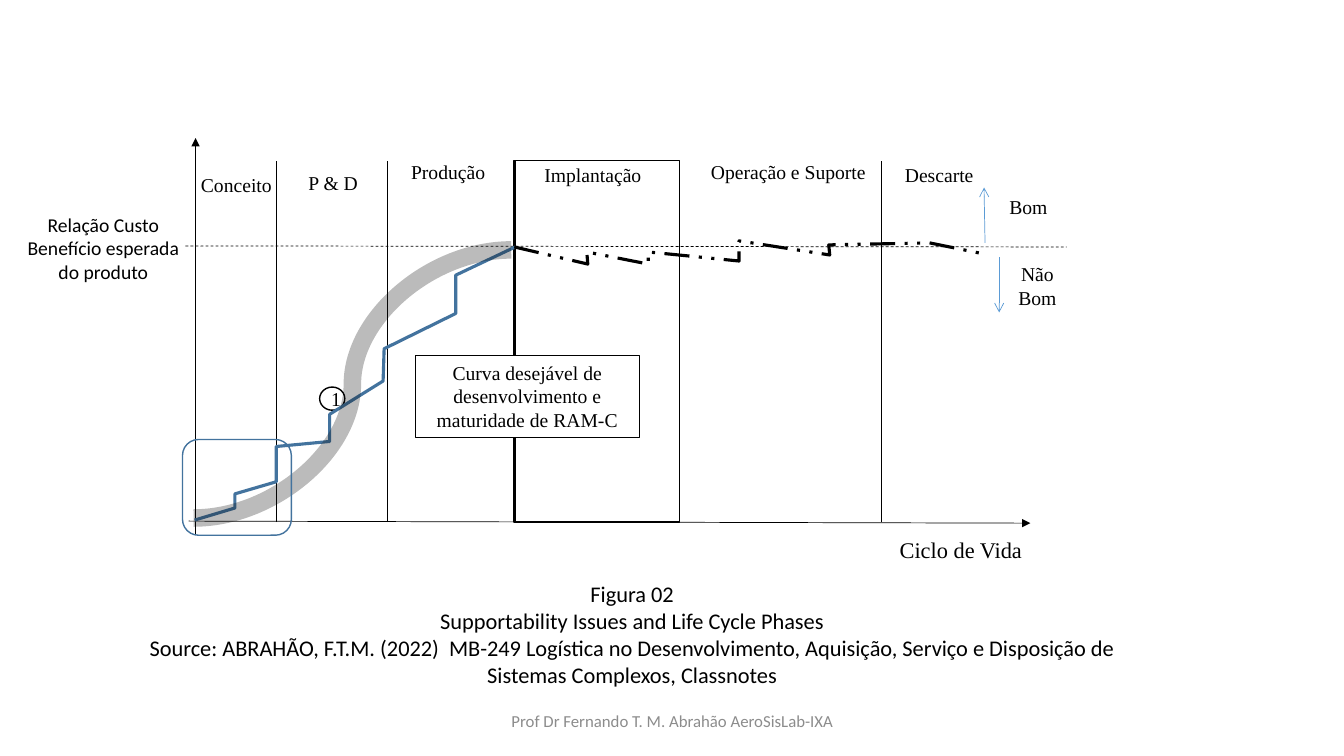
from lxml import etree
from pptx import Presentation
from pptx.dml.color import RGBColor
from pptx.enum.dml import MSO_LINE
from pptx.enum.shapes import MSO_CONNECTOR, MSO_SHAPE
from pptx.enum.text import MSO_ANCHOR, PP_ALIGN
from pptx.oxml.ns import qn
from pptx.util import Inches, Pt

BLACK, WHITE, BLUE, LIGHT_BLUE = "000000", "FFFFFF", "43739E", "5B9BD5"
SERIF, SANS = "Times New Roman", "Calibri"

presentation = Presentation()
presentation.slide_width = Inches(13.33)
presentation.slide_height = Inches(7.5)
slide = presentation.slides.add_slide(presentation.slide_layouts[6])
shapes = slide.shapes


def add_box(text, left, top, width, height, *, preset=MSO_SHAPE.RECTANGLE, fill=None, line=None,
            line_width=1, font=SERIF, size=14, color=BLACK, anchor=MSO_ANCHOR.TOP):
    """Add a preset shape, or a text box when it has neither fill nor line."""
    place = [Inches(value) for value in (left, top, width, height)]
    if fill or line:
        shape = shapes.add_shape(preset, *place)
        shape.shadow.inherit = False
        if fill:
            shape.fill.solid()
            shape.fill.fore_color.rgb = RGBColor.from_string(fill)
        else:
            shape.fill.background()
        if line:
            shape.line.color.rgb = RGBColor.from_string(line)
            shape.line.width = Pt(line_width)
        else:
            shape.line.fill.background()
    else:
        shape = shapes.add_textbox(*place)
    frame = shape.text_frame
    frame.word_wrap = True
    frame.vertical_anchor = anchor
    if text:
        frame.text = text
    for paragraph in frame.paragraphs:
        paragraph.alignment = PP_ALIGN.CENTER
        paragraph.font.name = font
        paragraph.font.size = Pt(size)
        paragraph.font.color.rgb = RGBColor.from_string(color)


def add_line(*points, kind=MSO_CONNECTOR.STRAIGHT, color=BLACK, width=0.5, dash=None,
             arrow=None, alpha=None):
    """Connect two points, or draw an open outline through more of them."""
    if len(points) == 2:
        shape = shapes.add_connector(kind, *[Inches(v) for point in points for v in point])
        etree.SubElement(shape._element.spPr, qn("a:effectLst"))
    else:
        corners = [(Inches(x), Inches(y)) for x, y in points]
        builder = shapes.build_freeform(*corners[0], scale=1.0)
        builder.add_line_segments(corners[1:], close=False)
        shape = builder.convert_to_shape()
        shape.shadow.inherit = False
        shape.fill.background()
    shape.line.color.rgb = RGBColor.from_string(color)
    shape.line.width = Pt(width)
    if dash:
        shape.line.dash_style = dash
    outline = shape.line._get_or_add_ln()
    if arrow:
        etree.SubElement(outline, qn("a:tailEnd"), type=arrow)
    if alpha:
        etree.SubElement(outline.find(".//" + qn("a:srgbClr")), qn("a:alpha"), val=str(alpha * 1000))


# Caption and axes
add_box("Figura 02\nSupportability Issues and Life Cycle Phases\n"
        "Source: ABRAHÃO, F.T.M. (2022)  MB-249 Logística no Desenvolvimento, Aquisição, "
        "Serviço e Disposição de Sistemas Complexos, Classnotes",
        1.27, 5.71, 10, 1.18, fill=WHITE, font=SANS, size=16)
add_line((1.87, 5.17), (10.22, 5.19), arrow="triangle")
add_line((1.94, 5.31), (1.94, 1.37), arrow="triangle")
add_box("Ciclo de Vida", 8.71, 5.27, 1.64, 0.37, size=16)

# Life cycle phases
add_box("", 5.1, 1.59, 1.64, 3.59, line=BLACK)
for name, left, top, width in [
    ("Conceito", 1.81, 1.67, 1.07),
    ("P & D", 2.77, 1.65, 1.07),
    ("Produção", 3.73, 1.54, 1.43),
    ("Implantação", 5.22, 1.57, 1.32),
    ("Operação e Suporte", 6.86, 1.54, 1.92),
    ("Descarte", 8.74, 1.57, 1.15),
]:
    add_box(name, left, top, width, 0.34)
add_line((1.84, 2.44), (10.58, 2.45), dash=MSO_LINE.DASH)
for x in (2.74, 3.84, 5.11, 8.74):
    add_line((x, 5.18), (x, 1.6))

# Maturity curves
add_box("1", 3.17, 3.84, 0.25, 0.23, preset=MSO_SHAPE.OVAL, fill=WHITE, line=BLACK,
        anchor=MSO_ANCHOR.MIDDLE)
add_line((1.93, 5.16), (2.33, 5.04), (2.33, 4.9), (2.74, 4.78), (2.74, 4.43), (3.27, 4.38),
         (3.27, 4.11), (3.8, 3.78), (3.81, 3.46), (4.52, 3.11), (4.52, 2.73), (5.11, 2.45),
         color=BLUE, width=2.25)
add_box("Curva desejável de desenvolvimento e maturidade de RAM-C",
        4.12, 3.53, 2.22, 0.81, fill=WHITE, line=BLACK, line_width=0.75)
add_line((1.92, 5.14), (5.07, 2.48), kind=MSO_CONNECTOR.CURVE, color="0D0D0D", width=12.5, alpha=28)
add_line((5.1, 2.45), (5.83, 2.62), (5.82, 2.5), (6.43, 2.62), (6.43, 2.5), (7.33, 2.59),
         (7.33, 2.39), (8.23, 2.53), (8.22, 2.43), (9.22, 2.41), (9.71, 2.51),
         width=2.25, dash=MSO_LINE.DASH_DOT_DOT)
add_box("", 1.81, 4.36, 1.08, 0.95, preset=MSO_SHAPE.ROUNDED_RECTANGLE, line=BLUE)

# Good and bad directions
add_line((9.77, 2.41), (9.76, 1.86), color=LIGHT_BLUE, arrow="arrow")
add_line((9.91, 2.55), (9.91, 3.1), color=LIGHT_BLUE, arrow="arrow")
add_box("Bom", 9.82, 1.88, 0.76, 0.34)
add_box("Não Bom", 9.91, 2.55, 0.76, 0.57)

# Side label and footer
add_box("Relação Custo Benefício esperada do produto", 0.17, 2.06, 1.71, 0.81, font=SANS)
add_box("Prof Dr Fernando T. M. Abrahão AeroSisLab-IXA", 4.42, 6.95, 4.5, 0.4,
        font=SANS, size=12, color="8C8C8C", anchor=MSO_ANCHOR.MIDDLE)

presentation.save("out.pptx")
